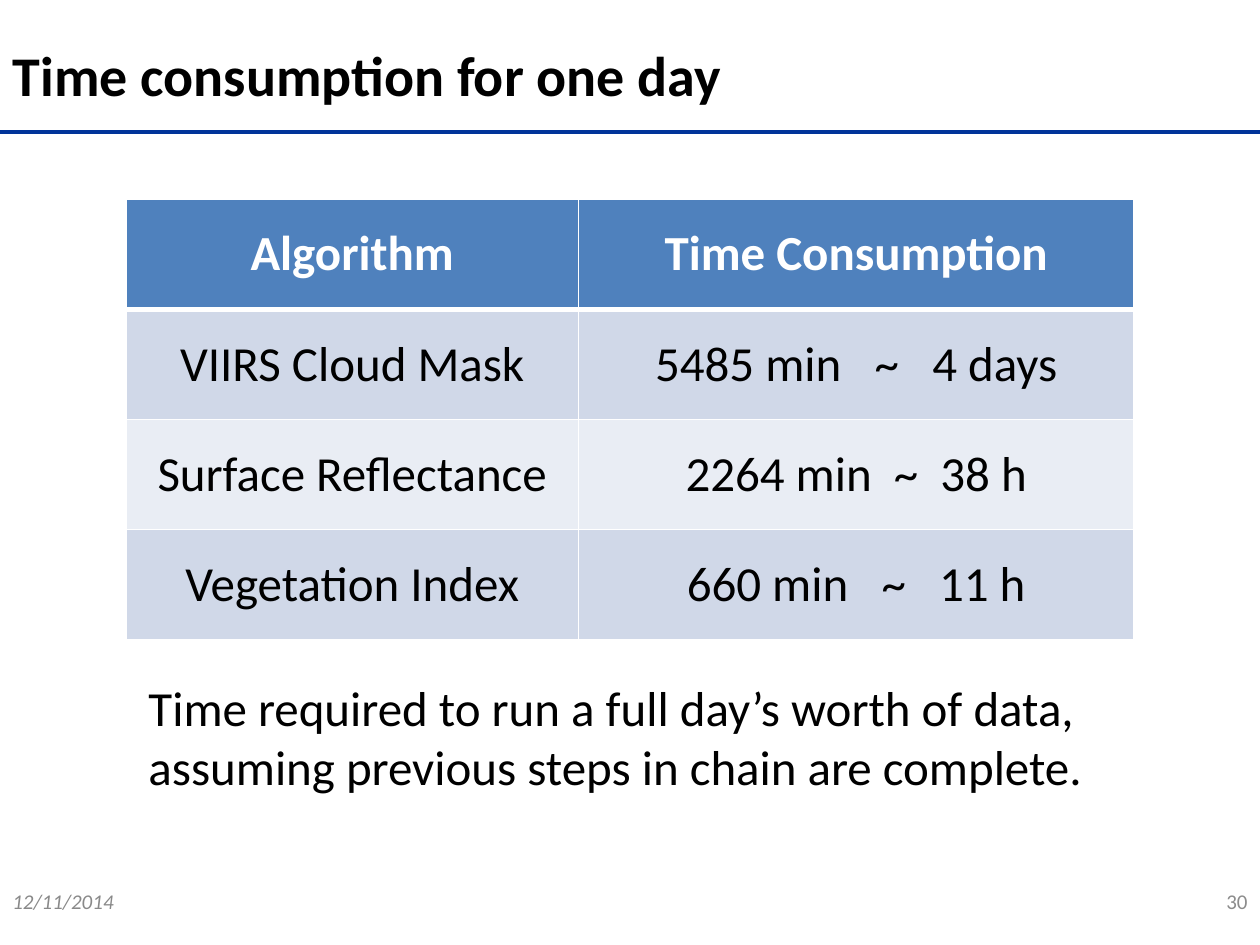
"""Build the slide on time consumption for one day of data."""
from lxml.etree import SubElement
from pptx import Presentation
from pptx.dml.color import RGBColor as RGB
from pptx.enum.shapes import MSO_CONNECTOR as CONN
from pptx.enum.text import MSO_ANCHOR as ANCHOR, PP_ALIGN as ALIGN
from pptx.oxml.ns import qn
from pptx.util import Inches, Pt

COLORS = {"rule": "003399", "head": "4F81BD", "odd": "D0D8E8", "even": "E9EDF4",
          "white": "FFFFFF", "black": "000000", "date": "898989", "number": "8C8C8C"}
SPACE = 6.33
ROWS = [("Algorithm", ["Time Consumption"], 0),
        ("VIIRS Cloud Mask", ["5485 min", "~", "4 days"], 2 * SPACE),
        ("Surface Reflectance", ["2264 min", "~", "38 h"], SPACE),
        ("Vegetation Index", ["660 min", "~", "11 h"], 2 * SPACE)]


def add_run(p, text, size, color, bold=False, italic=False, gap=0):
    r = p.add_run()
    r.text = text
    r.font.name, r.font.size = "Calibri", Pt(size)
    r.font.bold, r.font.italic = bold, italic
    r.font.color.rgb = RGB.from_string(COLORS[color])
    if gap:
        r.font._element.set("spc", str(round(gap * 100)))


def add_border(cell, side, width):
    ln = SubElement(cell._tc.get_or_add_tcPr(), qn(f"a:ln{side}"), w=str(Pt(width)))
    fill = SubElement(ln, qn("a:solidFill"))
    SubElement(fill, qn("a:srgbClr"), val=COLORS["white"])


prs = Presentation()
prs.slide_width, prs.slide_height = Inches(10), Inches(7.5)
W, H = prs.slide_width, prs.slide_height
s = prs.slides.add_slide(prs.slide_layouts[5])

rule = s.shapes.add_connector(CONN.STRAIGHT, 0, int(H * 0.14), W, int(H * 0.14))
rule.line.color.rgb = RGB.from_string(COLORS["rule"])
rule.line.width = Pt(2.25)
SubElement(rule._element.spPr, qn("a:effectLst"))

title = s.shapes.title
title.left, title.top, title.width, title.height = 0, Inches(0.25), Inches(7.83), Inches(0.67)
tf = title.text_frame
tf.vertical_anchor = ANCHOR.MIDDLE
tf.paragraphs[0].alignment = ALIGN.LEFT
add_run(tf.paragraphs[0], "Time consumption for one day", 32, "black", bold=True)

table = s.shapes.add_table(len(ROWS), 2, W // 10, Inches(1.58), int(W * 0.8), Inches(3.5)).table
table.columns[0].width = Inches(3.59)
table.columns[1].width = Inches(4.41)
for i, (algorithm, parts, gap) in enumerate(ROWS):
    fill = "head" if i == 0 else "odd" if i % 2 else "even"
    color = "white" if i == 0 else "black"
    for j, words in enumerate([[algorithm], parts]):
        cell = table.cell(i, j)
        for side in "LRTB":
            thick = (i, side) in [(0, "B"), (1, "T")]
            add_border(cell, side, 3 if thick else 1)
        cell.fill.solid()
        cell.fill.fore_color.rgb = RGB.from_string(COLORS[fill])
        cell.vertical_anchor = ANCHOR.MIDDLE
        p = cell.text_frame.paragraphs[0]
        p.alignment = ALIGN.CENTER
        for k, word in enumerate(words):
            if k:
                add_run(p, " ", 28, color, gap=gap)
            add_run(p, word, 28, color, bold=i == 0)

note = "Time required to run a full day’s worth of data, assuming previous steps in chain are complete."
TEXTS = [
    (note, 1.08, 5.33, 7.92, 1.04, 28, "black", False, ALIGN.LEFT, ANCHOR.TOP),
    ("12/11/2014", 0, 6.95, 2.33, 0.4, 12, "date", True, ALIGN.LEFT, ANCHOR.MIDDLE),
    ("30", 7.67, 6.95, 2.33, 0.4, 12, "number", False, ALIGN.RIGHT, ANCHOR.MIDDLE),
]
for text, x, y, w, h, size, color, italic, align, anchor in TEXTS:
    tf = s.shapes.add_textbox(Inches(x), Inches(y), Inches(w), Inches(h)).text_frame
    tf.word_wrap = True
    tf.vertical_anchor = anchor
    tf.paragraphs[0].alignment = align
    add_run(tf.paragraphs[0], text, size, color, italic=italic)

prs.save("out.pptx")
